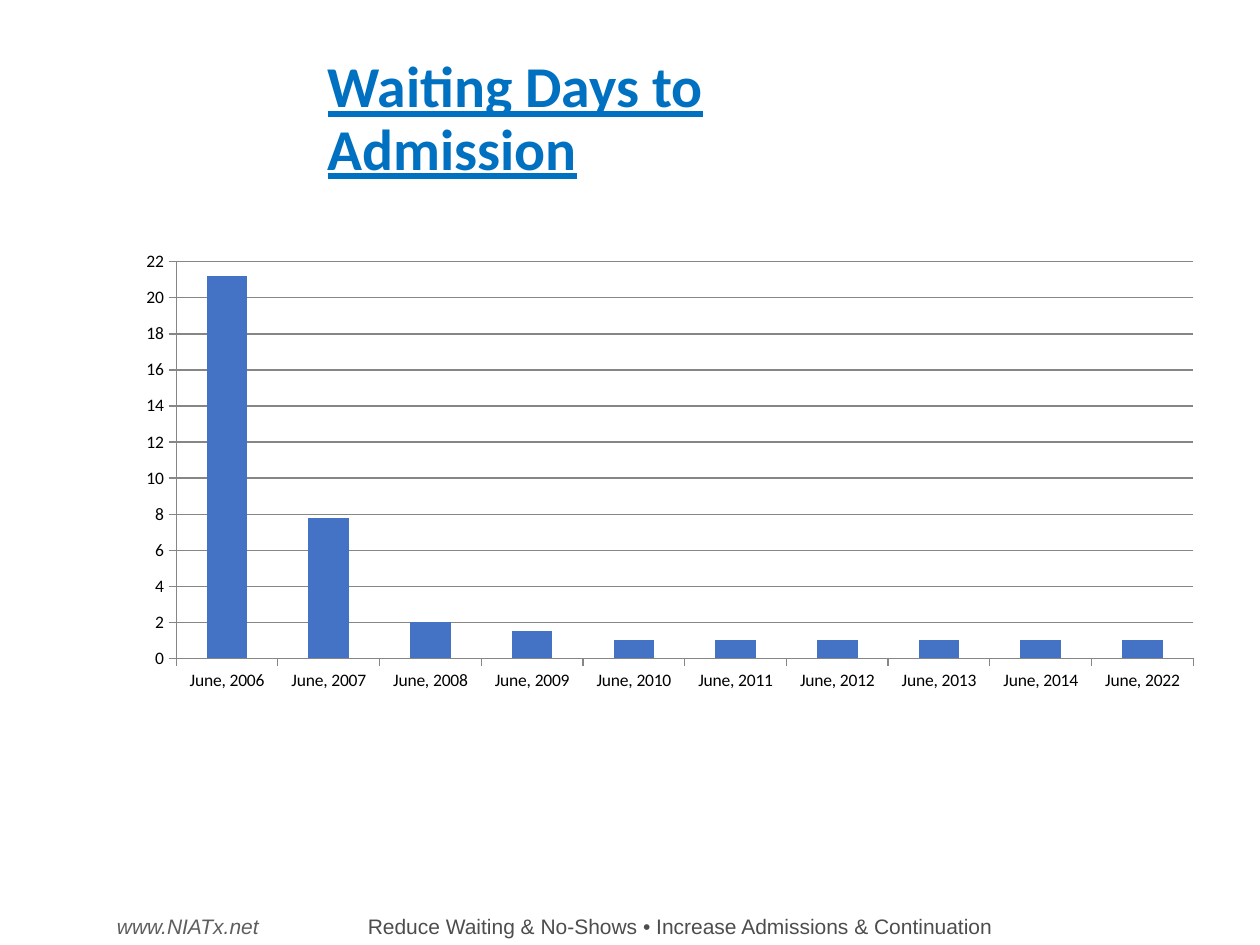
import pptx
import pptx.util
import pptx.chart.data
import pptx.dml.color
import pptx.enum.chart
import pptx.enum.text
import pptx.oxml

BLUE = pptx.dml.color.RGBColor(0x00, 0x70, 0xC0)
BAR = pptx.dml.color.RGBColor(0x44, 0x72, 0xC4)
GRID = pptx.dml.color.RGBColor(0x86, 0x86, 0x86)
BLACK = pptx.dml.color.RGBColor(0, 0, 0)
DARK = pptx.dml.color.RGBColor(0x4D, 0x4D, 0x4D)
GRAY = pptx.dml.color.RGBColor(0x5E, 0x5E, 0x5E)
LEFT = pptx.enum.text.PP_ALIGN.LEFT
MID = pptx.enum.text.PP_ALIGN.CENTER
WIDE, HIGH = pptx.util.Inches(10), pptx.util.Inches(7.5)
YEARS = [*range(2006, 2015), 2022]
DAYS = [21.2, 7.8, 2, 1.5] + [1] * 6
PLOT = {"x": 0.072, "y": 0.172, "w": 0.897, "h": 0.656}


def write(frame, text, size, color, face="Arial", align=LEFT, lead=None, **marks):
    line = frame.paragraphs[0]
    line.alignment = align
    line.line_spacing = lead
    run = line.add_run()
    run.text = text
    run.font.name = face
    run.font.size = pptx.util.Pt(size)
    run.font.color.rgb = color
    for mark, value in marks.items():
        setattr(run.font, mark, value)


class Page:
    face = "Calibri"

    def __init__(self, deck):
        self.slide = deck.slides.add_slide(deck.slide_layouts[5])

    def box(self, x, y, w, h):
        return [round(v) for v in (x * WIDE, y * HIGH, w * WIDE, h * HIGH)]

    def title(self, text, *area):
        shape = self.slide.shapes.title
        shape.left, shape.top, shape.width, shape.height = self.box(*area)
        frame = shape.text_frame
        frame.word_wrap = True
        frame.auto_size = pptx.enum.text.MSO_AUTO_SIZE.NONE
        frame.vertical_anchor = pptx.enum.text.MSO_ANCHOR.MIDDLE
        write(frame, text, 33, BLUE, self.face, lead=0.9, bold=True, underline=True)

    def label(self, text, *area, color, wrap=True, **style):
        frame = self.slide.shapes.add_textbox(*self.box(*area)).text_frame
        frame.word_wrap = wrap
        write(frame, text, 12, color, **style)

    def chart(self, names, values, *area):
        data = pptx.chart.data.CategoryChartData()
        data.categories = names
        data.add_series("Series 1", values)
        kind = pptx.enum.chart.XL_CHART_TYPE.COLUMN_CLUSTERED
        chart = self.slide.shapes.add_chart(kind, *self.box(*area), data).chart
        chart.has_legend = chart.has_title = False
        chart.font.name = self.face
        chart.font.size = pptx.util.Pt(10)
        chart.font.color.rgb = BLACK
        plot = chart.plots[0]
        plot.gap_width = 150
        plot.vary_by_categories = False
        fill = plot.series[0].format.fill
        fill.solid()
        fill.fore_color.rgb = BAR
        rise = chart.value_axis
        rise.minimum_scale, rise.maximum_scale, rise.major_unit = 0, 22, 2
        rise.has_major_gridlines = True
        for axis in (rise, chart.category_axis):
            axis.major_tick_mark = pptx.enum.chart.XL_TICK_MARK.OUTSIDE
        for part in (rise, chart.category_axis, rise.major_gridlines):
            part.format.line.color.rgb = GRID
            part.format.line.width = pptx.util.Pt(0.75)
        self.place(chart)

    def place(self, chart):
        space = "http://schemas.openxmlformats.org/drawingml/2006/chart"
        modes = '<c:layoutTarget val="inner"/><c:xMode val="edge"/><c:yMode val="edge"/>'
        sizes = "".join(f'<c:{k} val="{v}"/>' for k, v in PLOT.items())
        layout = pptx.oxml.parse_xml(
            f'<c:layout xmlns:c="{space}"><c:manualLayout>{modes}{sizes}'
            "</c:manualLayout></c:layout>")
        area = chart.plots[0]._element.getparent()
        for old in area.findall(f"{{{space}}}layout"):
            area.remove(old)
        area.insert(0, layout)


def main():
    deck = pptx.Presentation()
    deck.slide_width, deck.slide_height = WIDE, HIGH
    page = Page(deck)
    page.label("Reduce Waiting & No-Shows • Increase Admissions & Continuation",
               0.09, 0.96, 0.9, 0.04, color=DARK, align=MID)
    page.label("www.NIATx.net", 0.083, 0.96, 0.135, 0.04,
               color=GRAY, wrap=False, italic=True)
    page.title("Waiting Days to Admission", 0.25, 0.044, 0.5, 0.167)
    page.chart([f"June, {year}" for year in YEARS], DAYS, 0.075, 0.167, 0.9, 0.64)
    deck.save("out.pptx")


if __name__ == "__main__":
    main()
